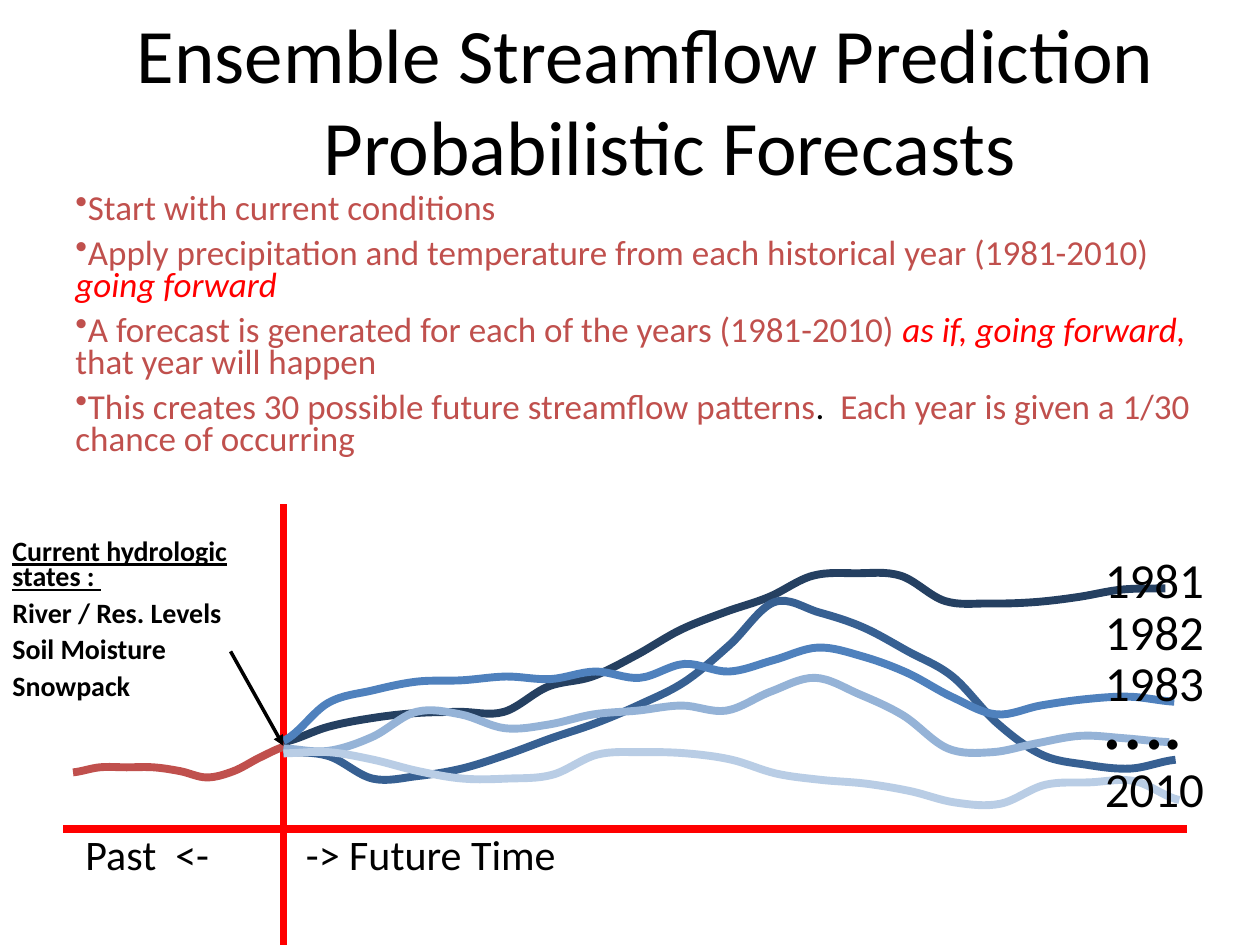
from lxml.etree import SubElement
from pptx import Presentation
from pptx.dml.color import RGBColor
from pptx.enum.shapes import MSO_CONNECTOR as Connector
from pptx.enum.text import MSO_ANCHOR as Anchor, PP_ALIGN as Align
from pptx.oxml.ns import qn
from pptx.util import Inches, Pt

FONT = "Calibri"
BLACK, RED, BRICK = "000000", "FF0000", "C0504D"
EMPHASIS = {"color": RED, "italic": True}
NOW = 2.25

# Curve heights at equal steps from left to right
PAST = [6.13, 6.09, 6.09, 6.09, 6.12, 6.17, 6.12, 6.01, 5.92]

# Label, label top, label width, label size, curve colour, curve end, curve heights
FORECASTS = [
    ("1981", 4.42, 1, 28, "254061", 9.25, [
        5.89, 5.77, 5.7, 5.66, 5.65, 5.65, 5.45, 5.37, 5.2, 5, 4.86,
        4.74, 4.57, 4.55, 4.57, 4.77, 4.79, 4.78, 4.74, 4.68, 4.67]),
    ("1982", 4.83, 1, 28, "376092", 9.33, [
        5.97, 6, 6.18, 6.16, 6.1, 5.99, 5.86, 5.74, 5.59, 5.41, 5.12,
        4.78, 4.86, 4.98, 5.17, 5.37, 5.74, 5.99, 6.07, 6.1, 6.03]),
    ("1983", 5.24, 1, 28, "4F81BD", 9.32, [
        5.88, 5.58, 5.48, 5.41, 5.4, 5.37, 5.39, 5.33, 5.38, 5.27, 5.33,
        5.24, 5.14, 5.21, 5.34, 5.53, 5.67, 5.6, 5.55, 5.53, 5.57]),
    ("….", 5.42, 0.84, 48, "95B3D7", 9.28, [
        5.94, 5.96, 5.85, 5.65, 5.67, 5.78, 5.75, 5.67, 5.64, 5.6, 5.64,
        5.49, 5.38, 5.51, 5.68, 5.94, 5.97, 5.9, 5.84, 5.86, 5.89]),
    ("2010", 6.08, 1, 28, "B9CDE5", 9.36, [
        5.98, 5.97, 6.03, 6.12, 6.18, 6.18, 6.15, 5.99, 5.97, 5.98, 6.03,
        6.14, 6.19, 6.22, 6.28, 6.37, 6.38, 6.23, 6.21, 6.2, 6.35]),
]

STATES = [
    [("Current hydrologic states : ", {"underline": True})],
    [("River / Res. Levels", {})],
    [("Soil Moisture", {})],
    [("Snowpack", {})],
]

STEPS = [
    [("Start with current conditions", {})],
    [("Apply precipitation and temperature from each historical year (1981-2010) ", {}),
     ("going forward", EMPHASIS)],
    [("A forecast is generated for each of the years (1981-2010) ", {}),
     ("as if, going forward, ", EMPHASIS), ("that year will happen", {})],
    [("This creates 30 possible future streamflow patterns", {}), (".  ", {"color": BLACK}),
     ("Each year is given a 1/30 chance of occurring", {})],
]


def rgb(color):
    return RGBColor.from_string(color)


def add_span(para, text, size, color=BLACK, **styles):
    span = para.add_run()
    span.text = text
    for name, value in {"name": FONT, "size": Pt(size), **styles}.items():
        setattr(span.font, name, value)
    span.font.color.rgb = rgb(color)


def add_text(page, area, paras, size, wrap=True, bullet=None, para_format=None, **styles):
    frame = page.shapes.add_textbox(*map(Inches, area)).text_frame
    frame.word_wrap = wrap
    frame.vertical_anchor = Anchor.TOP
    para_format = para_format or {"line_spacing": 0.75, "space_after": Pt(0.4 * size)}
    for index, spans in enumerate(paras):
        para = frame.add_paragraph() if index else frame.paragraphs[0]
        for name, value in para_format.items():
            setattr(para, name, value)
        if bullet:
            SubElement(para._p.get_or_add_pPr(), qn("a:buChar"), char=bullet)
        for text, changes in spans:
            add_span(para, text, size, **{**styles, **changes})
    return frame


def add_label(page, text, area, size):
    add_text(page, area, [[(text, {})]], size, wrap=False)


def add_line(page, start, end, color, width, arrow=False):
    line = page.shapes.add_connector(Connector.STRAIGHT, *map(Inches, start + end))
    line.line.color.rgb = rgb(color)
    line.line.width = Pt(width)
    if arrow:
        SubElement(line.line._get_or_add_ln(), qn("a:tailEnd"), type="triangle")
    SubElement(line._element.spPr, qn("a:effectLst"))


def smooth_points(left, right, heights):
    """Two control points and an end point for each step between heights."""
    step = (right - left) / (len(heights) - 1)
    padded = [heights[0], *heights, heights[-1]]
    points = []
    for index, (before, start, end, after) in enumerate(
            zip(padded, padded[1:], padded[2:], padded[3:])):
        x = left + index * step
        points += [(x + step / 3, start + (end - before) / 6),
                   (x + step * 2 / 3, end - (after - start) / 6),
                   (x + step, end)]
    return points


def add_curve(page, left, right, heights, color):
    builder = page.shapes.build_freeform(Inches(left), Inches(heights[0]))
    points = smooth_points(left, right, heights)
    builder.add_line_segments([(Inches(x), Inches(y)) for x, y in points], close=False)
    curve = builder.convert_to_shape()
    curve.shadow.inherit = False
    curve.fill.background()
    curve.line.color.rgb = rgb(color)
    curve.line.width = Pt(4.5)
    # Every three straight segments become one Bezier segment
    outline = next(curve._element.iter(qn("a:path")))
    segments = outline.findall(qn("a:lnTo"))
    for first in range(0, len(segments), 3):
        bezier = SubElement(outline, qn("a:cubicBezTo"))
        for segment in segments[first:first + 3]:
            bezier.append(segment[0])
            outline.remove(segment)


def main():
    deck = Presentation()
    deck.slide_width, deck.slide_height = Inches(10), Inches(7.5)
    page = deck.slides.add_slide(deck.slide_layouts[6])

    # Title, with a hanging indent
    title = [[("Ensemble Streamflow Prediction Probabilistic Forecasts", {})]]
    frame = add_text(page, (0.25, 0, 9.75, 1.12), title, 44,
                     para_format={"alignment": Align.CENTER})
    indent = Inches(0.38)
    layout = frame.paragraphs[0]._p.get_or_add_pPr()
    layout.set("marL", str(indent))
    layout.set("indent", str(-indent))

    # Axes
    add_line(page, (0.5, 6.58), (9.42, 6.58), RED, 4.5)
    add_line(page, (NOW, 4), (NOW, 7.5), RED, 4.5)

    # Past flow and forecast traces
    add_curve(page, 0.58, 2.28, PAST, BRICK)
    for label, top, width, size, color, end, heights in FORECASTS:
        add_curve(page, NOW, end, heights, color)
        add_label(page, label, (8.67, top, width, size / 60), size)

    # Current states and their arrow
    add_text(page, (0, 4.25, 2.39, 1.43), STATES, 16, bold=True)
    add_line(page, (1.83, 5.17), (NOW, 5.92), BLACK, 2, arrow=True)

    # Time labels
    add_label(page, "-> Future Time", (2.33, 6.62, 2.5, 0.4), 24)
    add_label(page, "Past  <-", (0.58, 6.62, 1.36, 0.4), 24)

    # Forecast steps
    add_text(page, (0.5, 1.5, 9.08, 2.67), STEPS, 20, bullet="•", color=BRICK)

    deck.save("out.pptx")


if __name__ == "__main__":
    main()
